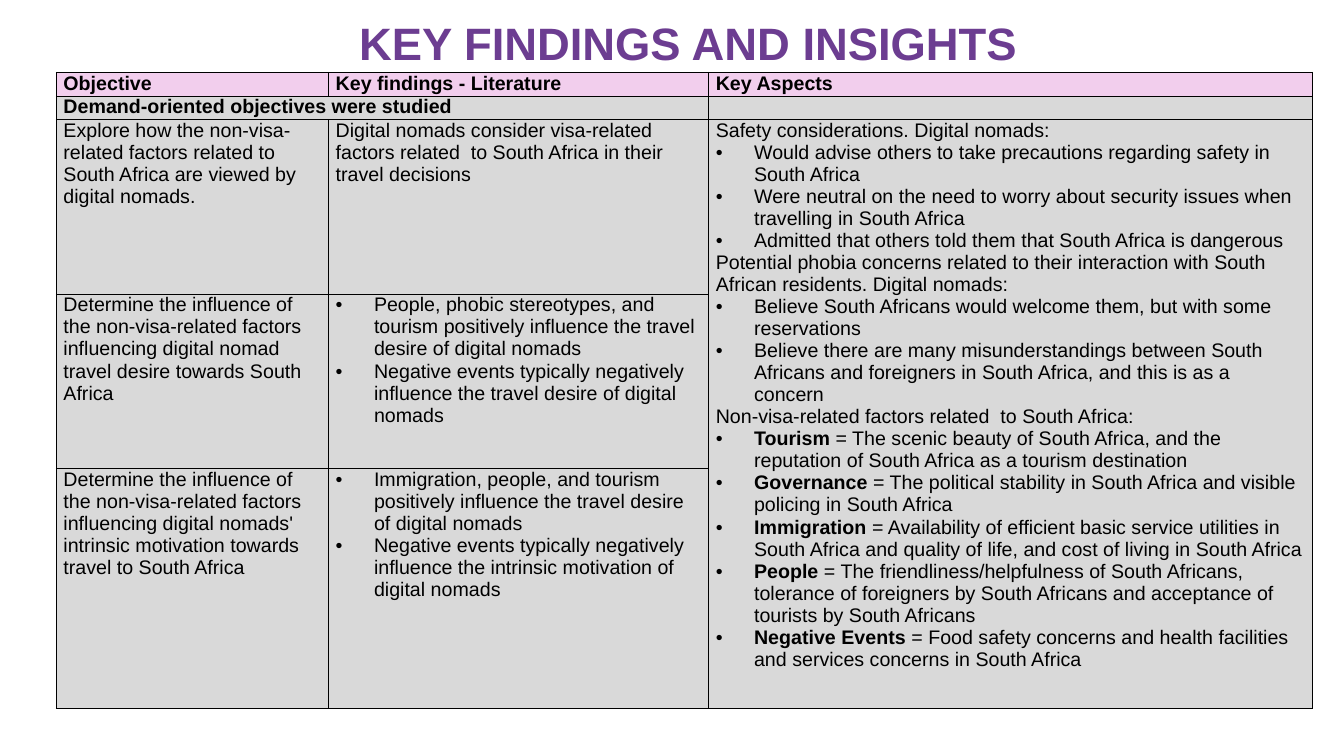
from lxml import etree
from pptx import Presentation
from pptx.dml.color import RGBColor
from pptx.enum import text as t
from pptx.oxml import ns
from pptx.util import Inches, Pt

TITLE = "KEY FINDINGS AND INSIGHTS"
PURPLE, BLACK, PINK, GREY = "6C3D91", "000000", "F2CEED", "D9D9D9"
COLUMN_WIDTHS = [2.7, 3.77, 5.99]
ROW_HEIGHTS = [0.22, 0.22, 1.73, 1.73, 2.22]
BULLET = "• "
DEFINES = " = "  # the term before it is bold

HEADINGS = ["Objective", "Key findings - Literature", "Key Aspects"]
SECTION = "Demand-oriented objectives were studied"
FINDINGS = [  # objective, findings from the literature
    ("Explore how the non-visa-related factors related to South Africa are viewed by digital nomads.",
     ["Digital nomads consider visa-related factors related  to South Africa in their travel decisions"]),
    ("Determine the influence of the non-visa-related factors influencing digital nomad travel desire "
     "towards South Africa",
     ["• People, phobic stereotypes, and tourism positively influence the travel desire of digital nomads",
      "• Negative events typically negatively influence the travel desire of digital nomads"]),
    ("Determine the influence of the non-visa-related factors influencing digital nomads' intrinsic "
     "motivation towards travel to South Africa",
     ["• Immigration, people, and tourism positively influence the travel desire of digital nomads",
      "• Negative events typically negatively influence the intrinsic motivation of digital nomads"]),
]
ASPECTS = [
    "Safety considerations. Digital nomads:",
    "• Would advise others to take precautions regarding safety in South Africa",
    "• Were neutral on the need to worry about security issues when travelling in South Africa",
    "• Admitted that others told them that South Africa is dangerous",
    "Potential phobia concerns related to their interaction with South African residents. Digital nomads:",
    "• Believe South Africans would welcome them, but with some reservations",
    "• Believe there are many misunderstandings between South Africans and foreigners in South Africa, "
    "and this is as a concern",
    "Non-visa-related factors related  to South Africa:",
    "• Tourism = The scenic beauty of South Africa, and the reputation of South Africa as a tourism destination",
    "• Governance = The political stability in South Africa and visible policing in South Africa",
    "• Immigration = Availability of efficient basic service utilities in South Africa and quality of life, "
    "and cost of living in South Africa",
    "• People = The friendliness/helpfulness of South Africans, tolerance of foreigners by South Africans "
    "and acceptance of tourists by South Africans",
    "• Negative Events = Food safety concerns and health facilities and services concerns in South Africa",
]


def rgb(color):
    return RGBColor.from_string(color)


def add_bullet(paragraph):
    properties = paragraph._p.get_or_add_pPr()
    properties.set("marL", str(Inches(0.38)))
    properties.set("indent", str(-Inches(0.38)))
    etree.SubElement(properties, ns.qn("a:buFont"), typeface="Arial")
    etree.SubElement(properties, ns.qn("a:buChar"), char=BULLET.strip())


def write(frame, lines, size=14, color=BLACK, bold=False, align=t.PP_ALIGN.LEFT, after=0, spacing=1.0):
    """Fill a text frame, one paragraph per line; a bullet mark or a defined term sets its format."""
    for i, line in enumerate(lines):
        paragraph = frame.paragraphs[0] if i == 0 else frame.add_paragraph()
        paragraph.alignment = align
        paragraph.line_spacing = spacing
        paragraph.space_after = Pt(after)
        if line.startswith(BULLET):
            add_bullet(paragraph)
            line = line[len(BULLET):]
        term, equals, meaning = line.partition(DEFINES)
        for words, strong in [(term, bold or bool(equals)), (equals + meaning, bold)]:
            if words:
                run = paragraph.add_run()
                run.text = words
                run.font.name, run.font.size, run.font.bold = "Arial", Pt(size), strong
                run.font.color.rgb = rgb(color)
        if not line:  # keeps an empty line at the text size
            etree.SubElement(paragraph._p, ns.qn("a:endParaRPr"), sz=str(size * 100))


def style_cell(cell, fill):
    cell.margin_left = cell.margin_right = Inches(0.07)
    cell.margin_top = cell.margin_bottom = 0
    properties = cell._tc.get_or_add_tcPr()
    for side in ("lnL", "lnR", "lnT", "lnB"):
        border = etree.SubElement(properties, ns.qn("a:" + side), w=str(Pt(1)))
        solid = etree.SubElement(border, ns.qn("a:solidFill"))
        etree.SubElement(solid, ns.qn("a:srgbClr"), val=BLACK)
    cell.fill.solid()
    cell.fill.fore_color.rgb = rgb(fill)


def add_title(slide):
    frame = slide.shapes.add_textbox(Inches(1.69), Inches(0.19), Inches(10.27), Inches(0.53)).text_frame
    frame.word_wrap = True
    frame.vertical_anchor = t.MSO_ANCHOR.MIDDLE
    frame.margin_left = frame.margin_right = frame.margin_top = frame.margin_bottom = 0
    write(frame, [TITLE], size=32.4, color=PURPLE, bold=True, align=t.PP_ALIGN.CENTER, spacing=0.9)


def add_findings(slide):
    table = slide.shapes.add_table(
        len(ROW_HEIGHTS), len(COLUMN_WIDTHS), Inches(0.56), Inches(0.72),
        Inches(sum(COLUMN_WIDTHS)), Inches(sum(ROW_HEIGHTS))).table
    for column, width in zip(table.columns, COLUMN_WIDTHS):
        column.width = Inches(width)
    for r, height in enumerate(ROW_HEIGHTS):
        table.rows[r].height = Inches(height)
        for cell in table.rows[r].cells:
            style_cell(cell, PINK if r == 0 else GREY)
    table.cell(1, 0).merge(table.cell(1, 1))
    table.cell(2, 2).merge(table.cell(4, 2))

    for c, heading in enumerate(HEADINGS):
        write(table.cell(0, c).text_frame, [heading], bold=True, align=t.PP_ALIGN.JUSTIFY, after=8)
    write(table.cell(1, 0).text_frame, [SECTION], bold=True, after=8)
    write(table.cell(1, 2).text_frame, [""])
    for r, (objective, literature) in enumerate(FINDINGS, start=2):
        write(table.cell(r, 0).text_frame, [objective])
        write(table.cell(r, 1).text_frame, literature)
    write(table.cell(2, 2).text_frame, ASPECTS)


def main():
    deck = Presentation()
    deck.slide_width, deck.slide_height = Inches(13.33), Inches(7.5)
    slide = deck.slides.add_slide(deck.slide_layouts[6])
    add_title(slide)
    add_findings(slide)
    deck.save("out.pptx")


if __name__ == "__main__":
    main()
